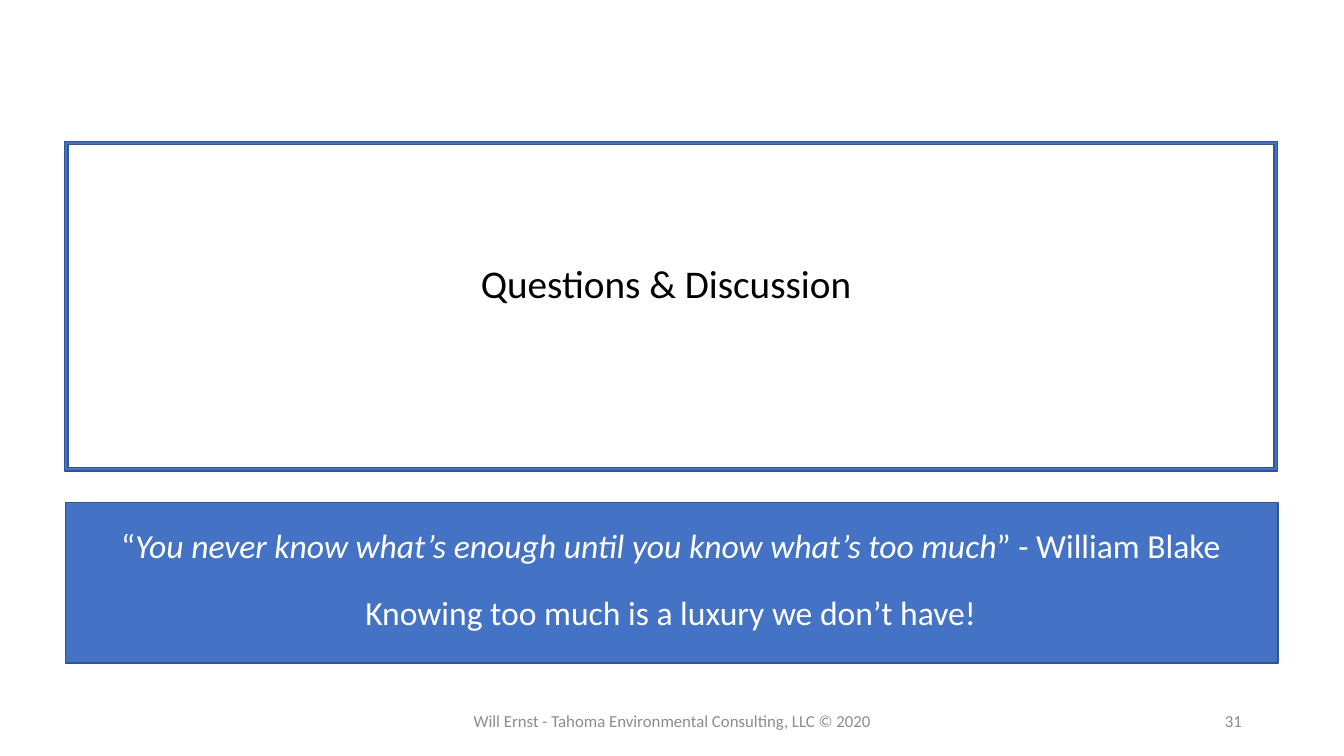
from pptx import Presentation
from pptx.dml.color import RGBColor
from pptx.enum.shapes import MSO_SHAPE
from pptx.enum.text import MSO_ANCHOR, MSO_AUTO_SIZE, PP_ALIGN
from pptx.util import Cm, Pt


def color(value):
    return RGBColor.from_string(value)


def style_paragraph(para, size, value, align):
    para.alignment = align
    para.font.name = "Calibri"
    para.font.size = Pt(size)
    para.font.color.rgb = color(value)


deck = Presentation()
deck.slide_width, deck.slide_height = Cm(33.87), Cm(19.05)
page = deck.slides.add_slide(deck.slide_layouts[5])

title = page.shapes.title
title.left, title.top, title.width, title.height = Cm(2.29), Cm(6.45), Cm(29.21), Cm(1.52)
title.text_frame.text = "Questions & Discussion "
title.text_frame.word_wrap = True
title.text_frame.auto_size = MSO_AUTO_SIZE.NONE
title.text_frame.vertical_anchor = MSO_ANCHOR.MIDDLE
heading = title.text_frame.paragraphs[0]
heading.line_spacing = 0.9
style_paragraph(heading, 28, "000000", PP_ALIGN.CENTER)

panels = [
    (MSO_SHAPE.FRAME, 1.63, 3.56, 8.31),
    (MSO_SHAPE.RECTANGLE, 1.65, 12.67, 4.04),
]
for kind, left, top, height in panels:
    panel = page.shapes.add_shape(kind, Cm(left), Cm(top), Cm(30.56), Cm(height))
    panel.shadow.inherit = False
    panel.fill.solid()
    panel.fill.fore_color.rgb = color("4472C4")
    panel.line.color.rgb = color("325491")
    panel.line.width = Pt(1)
    if kind == MSO_SHAPE.FRAME:
        panel.adjustments[0] = 0.01

quote_box = page.shapes.add_textbox(Cm(1.93), Cm(13.11), Cm(29.95), Cm(3))
quote_box.text_frame.word_wrap = True
quote = quote_box.text_frame.paragraphs[0]
for text, italic in [
    ("“", False),
    ("You never know what’s enough until you know what’s too much", True),
    ("” - William Blake", False),
]:
    span = quote.add_run()
    span.text = text
    span.font.italic = italic
reply = quote_box.text_frame.add_paragraph()
reply.text = "Knowing too much is a luxury we don’t have!"
reply.space_before = Pt(19)
for para in (quote, reply):
    style_paragraph(para, 24, "FFFFFF", PP_ALIGN.CENTER)

footers = [
    ("Will Ernst - Tahoma Environmental Consulting, LLC © 2020", 11.23, 11.43, PP_ALIGN.CENTER),
    ("31", 23.93, 7.62, PP_ALIGN.RIGHT),
]
for text, left, width, align in footers:
    footer = page.shapes.add_textbox(Cm(left), Cm(17.65), Cm(width), Cm(1.02))
    footer.text_frame.word_wrap = True
    footer.text_frame.vertical_anchor = MSO_ANCHOR.MIDDLE
    footer.text_frame.text = text
    style_paragraph(footer.text_frame.paragraphs[0], 12, "8C8C8C", align)

deck.save("out.pptx")
